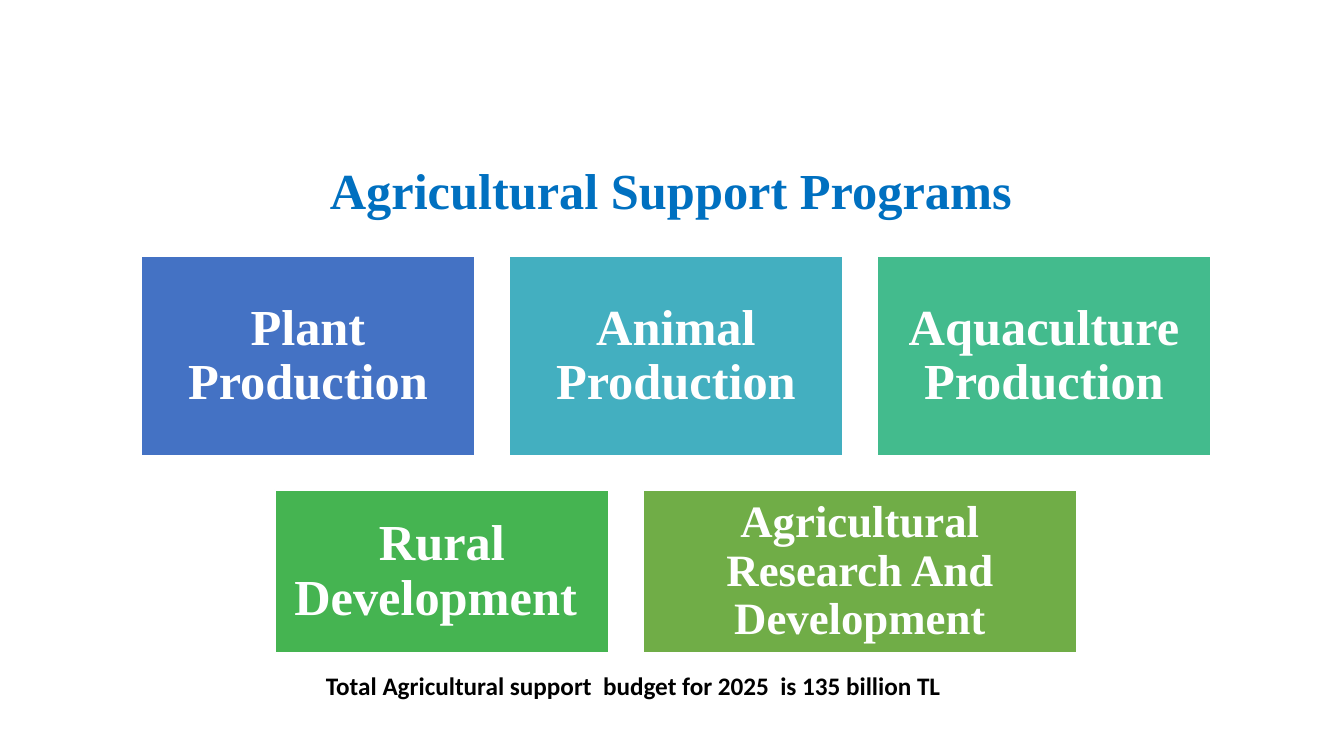
from pptx import Presentation
from pptx.dml.color import RGBColor
from pptx.enum.shapes import MSO_SHAPE
from pptx.enum.text import MSO_ANCHOR, MSO_AUTO_SIZE, PP_ALIGN
from pptx.util import Emu, Pt

RECTANGLE = MSO_SHAPE.RECTANGLE
MIDDLE, TOP = MSO_ANCHOR.MIDDLE, MSO_ANCHOR.TOP
CENTER, LEFT = PP_ALIGN.CENTER, PP_ALIGN.LEFT
NO_FIT = MSO_AUTO_SIZE.NONE

EMU_PER_PIXEL = 914400 / 100.8
SLIDE_SIZE = (1344, 756)
SERIF, SANS = "Times New Roman", "Calibri"
WHITE, BLACK, BLUE = "FFFFFF", "000000", "0070C0"

# Rows of programs: top, height, then text, fill, width, text size, inset
ROW_CENTER, GAP = 676, 34
PROGRAM_ROWS = [
    (256, 200, [
        ("Plant Production", "4472C4", 334, 36, 15),
        ("Animal Production", "43AFC0", 334, 36, 15),
        ("Aquaculture Production", "43BB8D", 334, 36, 15),
    ]),
    (490, 163, [
        ("Rural Development ", "45B451", 334, 36, 15),
        ("Agricultural Research And Development", "70AD47", 434, 32, 13),
    ]),
]


def px(length):
    return Emu(round(length * EMU_PER_PIXEL))


def color(hex_string):
    return RGBColor.from_string(hex_string)


class SlideBuilder:
    def __init__(self, presentation):
        title_only = presentation.slide_layouts[5]
        self.slide = presentation.slides.add_slide(title_only)

    def set_text(self, shape, text, font_name, size, text_color, alignment, anchor):
        frame = shape.text_frame
        frame.word_wrap = True
        frame.auto_size = NO_FIT
        frame.vertical_anchor = anchor
        paragraph = frame.paragraphs[0]
        paragraph.text = text
        paragraph.alignment = alignment
        font = paragraph.font
        font.name, font.size, font.bold = font_name, Pt(size), True
        font.color.rgb = color(text_color)
        return frame

    def title(self, text, left, top, width, height):
        shape = self.slide.shapes.title
        shape.left, shape.top = px(left), px(top)
        shape.width, shape.height = px(width), px(height)
        self.set_text(shape, text, SERIF, 36, BLUE, CENTER, TOP)

    def program_box(self, text, fill, left, top, width, height, size, inset):
        shape = self.slide.shapes.add_shape(
            RECTANGLE, px(left), px(top), px(width), px(height))
        shape.shadow.inherit = False
        shape.fill.solid()
        shape.fill.fore_color.rgb = color(fill)
        shape.line.color.rgb = color(WHITE)
        shape.line.width = Pt(1)
        frame = self.set_text(shape, text, SERIF, size, WHITE, CENTER, MIDDLE)
        frame.margin_left = frame.margin_right = px(inset)
        frame.margin_top = frame.margin_bottom = px(inset)
        frame.paragraphs[0].line_spacing = 0.9

    def note(self, text, left, top, width, height):
        shape = self.slide.shapes.add_textbox(
            px(left), px(top), px(width), px(height))
        self.set_text(shape, text, SANS, 18, BLACK, LEFT, TOP)


def main():
    presentation = Presentation()
    presentation.slide_width, presentation.slide_height = map(px, SLIDE_SIZE)
    builder = SlideBuilder(presentation)

    # Heading
    builder.title("Agricultural Support Programs", 137, 154, 1068, 72)

    # Program boxes, each row centred
    for top, height, programs in PROGRAM_ROWS:
        row_width = sum(program[2] for program in programs) + GAP * (len(programs) - 1)
        left = ROW_CENTER - row_width // 2
        for text, fill, width, size, inset in programs:
            builder.program_box(text, fill, left, top, width, height, size, inset)
            left += width + GAP

    # Budget line
    builder.note("Total Agricultural support  budget for 2025  is 135 billion TL",
                 316, 665, 720, 40)

    presentation.save("out.pptx")


if __name__ == "__main__":
    main()
